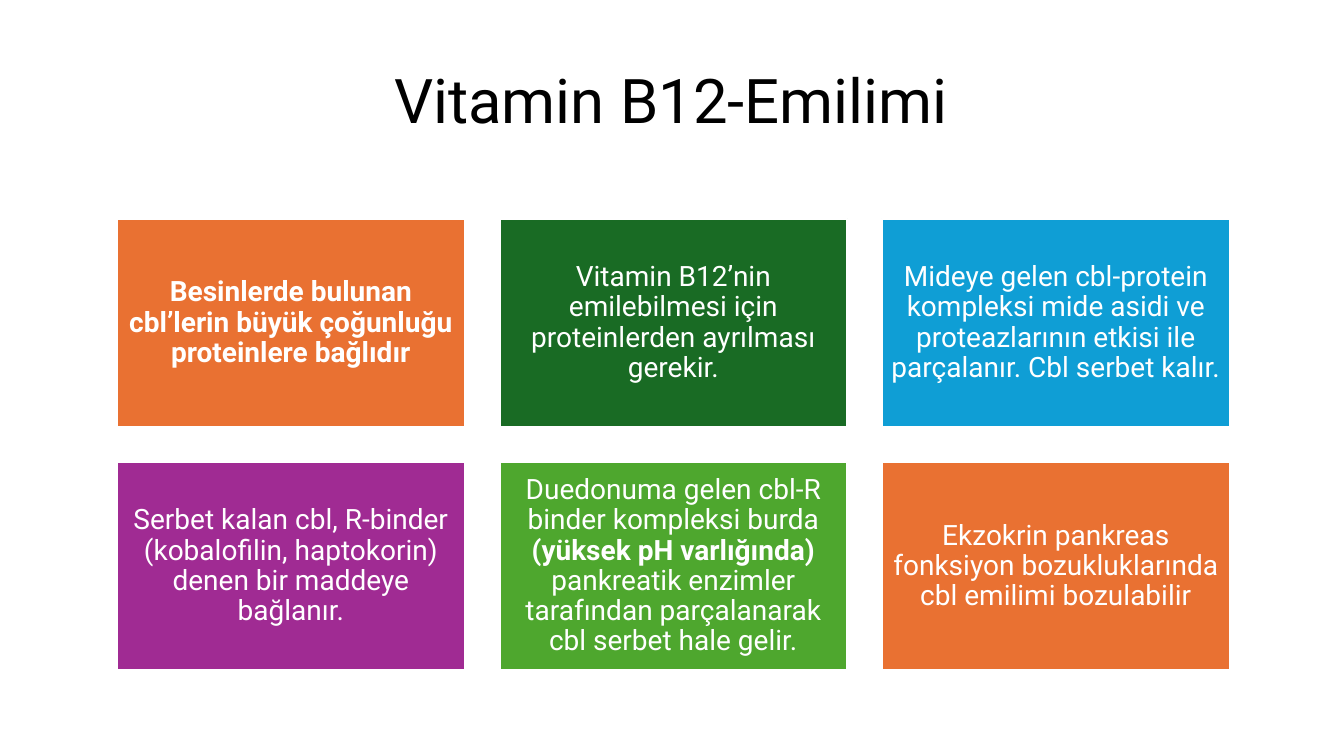
from pptx import Presentation
from pptx.dml.color import RGBColor
from pptx.enum.shapes import MSO_SHAPE as Shape
from pptx.enum.text import MSO_ANCHOR as Anchor, MSO_AUTO_SIZE as AutoSize, PP_ALIGN as Align
from pptx.util import Pt

# Content: each card has a fill and a list of (text, bold) spans
TITLE = "Vitamin B12-Emilimi"
CARDS = [
    ("E97132", [("Besinlerde bulunan cbl’lerin büyük çoğunluğu proteinlere bağlıdır", True)]),
    ("196B24", [("Vitamin B12’nin emilebilmesi için proteinlerden ayrılması gerekir.", False)]),
    ("0F9ED5", [("Mideye gelen cbl-protein kompleksi mide asidi ve proteazlarının etkisi ile "
                 "parçalanır. Cbl serbet kalır.", False)]),
    ("A02B93", [("Serbet kalan cbl, R-binder (kobalofilin, haptokorin) denen bir maddeye "
                 "bağlanır.", False)]),
    ("4EA72E", [("Duedonuma gelen cbl-R binder kompleksi burda ", False),
                ("(yüksek pH varlığında) ", True),
                ("pankreatik enzimler tarafından parçalanarak cbl serbet hale gelir.", False)]),
    ("E97132", [("Ekzokrin pankreas fonksiyon bozukluklarında cbl emilimi bozulabilir", False)]),
]

# Grid, in points
COLUMNS = 3
LEFT, TOP = 83.6, 156.2
WIDTH, HEIGHT = 248.4, 149
GAP = 24.8
INSET = 6


def color(value):
    return RGBColor.from_string(value)


def style(span, size, ink, bold=False):
    span.font.name = "Roboto"
    span.font.size = Pt(size)
    span.font.bold = bold
    span.font.color.rgb = color(ink)


def add_card(page, index, fill, spans):
    row, column = divmod(index, COLUMNS)
    card = page.shapes.add_shape(
        Shape.RECTANGLE,
        Pt(LEFT + column * (WIDTH + GAP)), Pt(TOP + row * (HEIGHT + GAP)),
        Pt(WIDTH), Pt(HEIGHT))
    card.shadow.inherit = False
    card.fill.solid()
    card.fill.fore_color.rgb = color(fill)
    card.line.color.rgb = color("FFFFFF")
    card.line.width = Pt(1.5)

    frame = card.text_frame
    frame.word_wrap = True
    frame.vertical_anchor = Anchor.MIDDLE
    frame.margin_left = frame.margin_right = Pt(INSET)
    frame.margin_top = frame.margin_bottom = Pt(INSET)
    para = frame.paragraphs[0]
    para.alignment = Align.CENTER
    para.line_spacing = 0.9
    for text, bold in spans:
        span = para.add_run()
        span.text = text
        style(span, 20, "FFFFFF", bold)


def main():
    deck = Presentation()
    deck.slide_width, deck.slide_height = Pt(960), Pt(540)
    page = deck.slides.add_slide(deck.slide_layouts[5])

    # Title
    title = page.shapes.title
    title.left, title.top, title.width, title.height = Pt(80.6), Pt(20.2), Pt(797.8), Pt(81.4)
    title.text_frame.text = TITLE
    title.text_frame.auto_size = AutoSize.NONE
    title.text_frame.vertical_anchor = Anchor.BOTTOM
    para = title.text_frame.paragraphs[0]
    para.alignment = Align.CENTER
    para.line_spacing = 0.9
    style(para.runs[0], 44, "000000")

    # Cards
    for index, (fill, spans) in enumerate(CARDS):
        add_card(page, index, fill, spans)

    deck.save("out.pptx")


if __name__ == "__main__":
    main()
